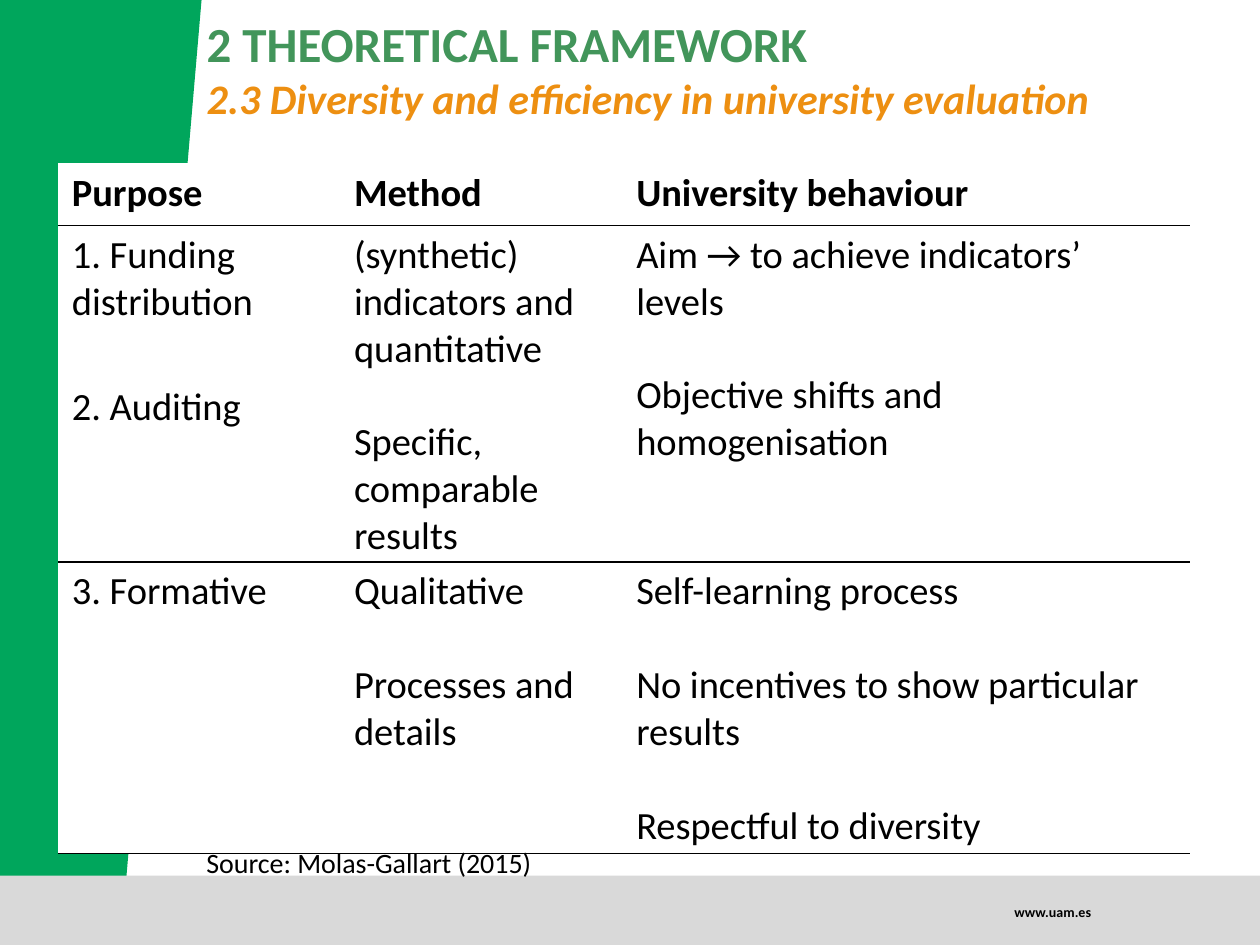
import pptx
import pptx.util
import pptx.dml.color
import pptx.enum.shapes
import pptx.enum.text
import pptx.oxml
import pptx.oxml.ns

Pt = pptx.util.Pt
Align = pptx.enum.text.PP_ALIGN
Anchor = pptx.enum.text.MSO_ANCHOR
COLS, ROWS = 100, 75
HUES = {
    "green": "00A65C", "band": "D9D9D9", "head": "42955A",
    "sub": "ED8F11", "ink": "000000", "paper": "FFFFFF",
}
WIDTHS = [22.4, 22.4, 44.9]
HEIGHTS = [4.9, 12.1, 14.5, 23.1]
CELLS = [
    [["Purpose"], ["Method"], ["University behaviour"]],
    [["1. Funding distribution"],
     ["(synthetic) indicators and quantitative",
      "Specific, comparable results"],
     ["Aim → to achieve indicators’ levels",
      "Objective shifts and homogenisation"]],
    [["2. Auditing"], [], []],
    [["3. Formative"],
     ["Qualitative", "Processes and details"],
     ["Self-learning process",
      "No incentives to show particular results",
      "Respectful to diversity"]],
]


def rgb(hue):
    return pptx.dml.color.RGBColor.from_string(HUES[hue])


class Page:
    """Style and current slide; lengths are in grid columns and rows."""
    font = "Calibri"

    def __init__(self, deck):
        self.unit = deck.slide_width / COLS
        self.slide = deck.slides.add_slide(deck.slide_layouts[5])
        self.shapes = self.slide.shapes

    def grid(self, *spans):
        return [round(span * self.unit) for span in spans]

    def paint(self, shape, hue):
        shape.fill.solid()
        shape.fill.fore_color.rgb = rgb(hue)
        shape.line.fill.background()
        shape.shadow.inherit = False

    def style(self, para, size, hue="ink", bold=False, slant=False):
        for run in para.runs:
            font = run.font
            font.name, font.size = self.font, Pt(size)
            font.bold, font.italic = bold, slant
            font.color.rgb = rgb(hue)

    def title(self, box, head, sub):
        shape = self.shapes.title
        shape.left, shape.top, shape.width, shape.height = self.grid(*box)
        frame = shape.text_frame
        frame.text = head + "\n" + sub
        frame.auto_size = pptx.enum.text.MSO_AUTO_SIZE.NONE
        frame.vertical_anchor = Anchor.TOP
        for para in frame.paragraphs:
            para.alignment = Align.LEFT
        self.style(frame.paragraphs[0], 28, "head", bold=True)
        self.style(frame.paragraphs[1], 24, "sub", bold=True, slant=True)

    def outline(self, points, hue):
        build = self.shapes.build_freeform(*points[0], scale=self.unit)
        build.add_line_segments(points[1:], close=True)
        self.paint(build.convert_to_shape(), hue)

    def bar(self, box, hue):
        kind = pptx.enum.shapes.MSO_SHAPE.RECTANGLE
        self.paint(self.shapes.add_shape(kind, *self.grid(*box)), hue)

    def label(self, box, text, size, align, anchor=Anchor.TOP, bold=False):
        frame = self.shapes.add_textbox(*self.grid(*box)).text_frame
        frame.word_wrap = True
        frame.vertical_anchor = anchor
        frame.text = text
        frame.paragraphs[0].alignment = align
        self.style(frame.paragraphs[0], size, bold=bold)

    def edge(self, cell, sides):
        """Draw 1 pt borders; sides maps L, R, T, B, in that order, to hues."""
        props = cell._tc.get_or_add_tcPr()
        for place, (side, hue) in enumerate(sides.items()):
            props.insert(place, pptx.oxml.parse_xml(
                f'<a:ln{side} {pptx.oxml.ns.nsdecls("a")} w="12700">'
                f'<a:solidFill><a:srgbClr val="{HUES[hue]}"/></a:solidFill>'
                f'</a:ln{side}>'))

    def table(self, left, top, size, gap):
        box = self.grid(left, top, sum(WIDTHS), sum(HEIGHTS))
        table = self.shapes.add_table(len(CELLS), len(WIDTHS), *box).table
        table.horz_banding = False
        for col, width in zip(table.columns, self.grid(*WIDTHS)):
            col.width = width
        for row, height in zip(table.rows, self.grid(*HEIGHTS)):
            row.height = height
        for col in (1, 2):
            table.cell(1, col).merge(table.cell(2, col))
        for r, line in enumerate(CELLS):
            for c, texts in enumerate(line):
                cell = table.cell(r, c)
                cell.fill.solid()
                cell.fill.fore_color.rgb = rgb("paper")
                above = r == 0 or (r, c) == (2, 0)
                self.edge(cell, {
                    "L": "paper", "R": "paper",
                    "T": "paper" if above else "ink",
                    "B": "paper" if (r, c) == (1, 0) else "ink"})
                if not texts:
                    continue
                cell.text_frame.text = "\n".join(texts)
                for i, para in enumerate(cell.text_frame.paragraphs):
                    if i:
                        para.space_before = Pt(gap)
                    self.style(para, size, bold=r == 0)


def main():
    deck = pptx.Presentation()
    deck.slide_width = pptx.util.Inches(10)
    deck.slide_height = round(deck.slide_width * ROWS / COLS)
    page = Page(deck)
    page.outline([(0, 0), (15.5, 0), (10.4, 69.6), (0, 69.5)], "green")
    page.bar((0, 69.5, COLS, 5.5), "band")
    page.label((75.3, 71.2, 12.3, 2.4), "www.uam.es", 8, Align.RIGHT,
               Anchor.MIDDLE, bold=True)
    page.title((15.4, 0.6, 84.6, 9.8), "2 THEORETICAL FRAMEWORK",
               "2.3 Diversity and efficiency in university evaluation")
    page.table(4.7, 13, size=22, gap=26.8)
    page.label((15.4, 66.6, 82.4, 3.7), "Source: Molas-Gallart (2015)", 16,
               Align.JUSTIFY)
    deck.save("out.pptx")


if __name__ == "__main__":
    main()
